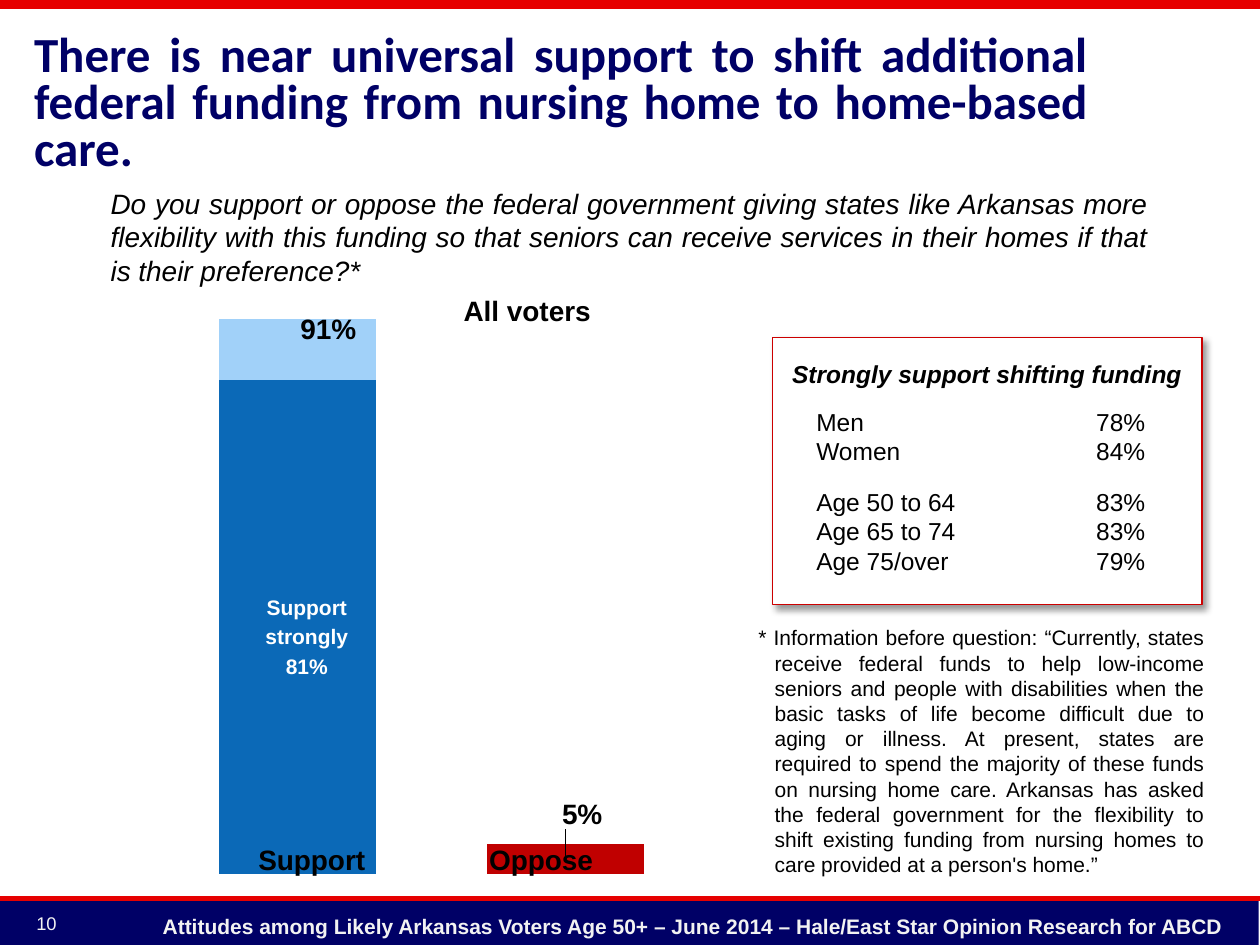
from lxml.etree import SubElement
from pptx import Presentation
from pptx.chart.data import CategoryChartData
from pptx.dml.color import RGBColor
from pptx.enum.chart import XL_CHART_TYPE
from pptx.enum.shapes import MSO_CONNECTOR, MSO_SHAPE
from pptx.enum.text import MSO_ANCHOR, MSO_AUTO_SIZE, PP_ALIGN
from pptx.oxml import parse_xml
from pptx.oxml.ns import nsdecls, qn
from pptx.util import Inches, Pt

COLORS = {
    "navy": "000066", "red": "E60000", "border": "CC0000", "pale": "F2F2F2",
    "black": "000000", "white": "FFFFFF", "strong": "0B69B7",
    "somewhat": "A1D1F9", "oppose": "C00000",
}


def color(name):
    return RGBColor.from_string(COLORS[name])


def set_font(font, size, tint="black", bold=False, italic=False, name="Arial"):
    font.name, font.size = name, Pt(size)
    font.bold, font.italic = bold, italic
    font.color.rgb = color(tint)


def add_text(page, box, paragraphs, size, tint="black", bold=False, italic=False,
             align=PP_ALIGN.LEFT, line=None, gap=None, wrap=True):
    frame = page.shapes.add_textbox(*map(Inches, box)).text_frame
    frame.word_wrap = wrap
    for index, text in enumerate(paragraphs):
        para = frame.add_paragraph() if index else frame.paragraphs[0]
        para.text = text
        para.alignment = align
        if line:
            para.line_spacing = Pt(line)
        if gap and index:
            para.space_before = Pt(gap)
        set_font(para.font, size, tint, bold, italic)
    return frame


def add_label(page, box, text, size=16, tint="black", italic=False):
    add_text(page, box, [text], size, tint, True, italic, PP_ALIGN.CENTER, line=17)


def add_rule(page, top, width):
    rule = page.shapes.add_connector(
        MSO_CONNECTOR.STRAIGHT, Inches(0), Inches(top), Inches(10), Inches(top))
    rule.line.color.rgb = color("red")
    rule.line.width = Pt(width)
    SubElement(rule._element.spPr, qn("a:effectLst"))


def add_panel(page, box, fill):
    panel = page.shapes.add_shape(MSO_SHAPE.RECTANGLE, *map(Inches, box))
    panel.shadow.inherit = False
    panel.fill.solid()
    panel.fill.fore_color.rgb = color(fill)
    panel.line.fill.background()
    return panel


def add_frame(page, left, top, width, height):
    add_rule(page, 0.03, 6)
    add_panel(page, (left, top, width, height), "navy")
    add_rule(page, top - 0.01, 3)
    add_text(page, (left + 1.09, top + 0.06, 8.72, 0.3),
             ["Attitudes among Likely Arkansas Voters Age 50+ – June 2014 – "
              "Hale/East Star Opinion Research for ABCD"],
             12, "pale", True, align=PP_ALIGN.RIGHT, wrap=False)
    add_text(page, (left + 0.19, top + 0.05, 0.64, 0.33), ["10"], 10.5, "pale")


def add_heading(page, left, top, width, height):
    title = page.shapes.title
    title.left, title.top = Inches(left), Inches(top)
    title.width, title.height = Inches(width), Inches(height)
    frame = title.text_frame
    frame.text = ("There is near universal support to shift additional federal "
                  "funding from nursing home to home-based care.")
    frame.auto_size = MSO_AUTO_SIZE.NONE
    frame.vertical_anchor = MSO_ANCHOR.MIDDLE
    para = frame.paragraphs[0]
    para.alignment = PP_ALIGN.JUSTIFY
    para.line_spacing = 0.8
    set_font(para.font, 28, "navy", True, name="Calibri")


def add_question(page, *box):
    add_text(page, box,
             ["Do you support or oppose the federal government giving states like "
              "Arkansas more flexibility with this funding so that seniors can "
              "receive services in their homes if that is their preference?*"],
             16, italic=True, align=PP_ALIGN.JUSTIFY)


def add_support_chart(page, left, top, width, height):
    data = CategoryChartData(number_format="0%")
    data.categories = ["1", "2"]
    data.add_series("Series 1", (0.81, None))
    data.add_series("Series 2", (0.1, None))
    data.add_series("Series 3", (None, 0.05))
    chart = page.shapes.add_chart(
        XL_CHART_TYPE.COLUMN_STACKED, *map(Inches, (left, top, width, height)), data).chart
    chart.has_legend = False
    chart.has_title = False
    set_font(chart.font, 18)
    chart.category_axis.visible = False
    values = chart.value_axis
    values.visible = False
    values.has_major_gridlines = False
    values.minimum_scale, values.maximum_scale = 0, 1
    plot = chart.plots[0]
    plot.gap_width, plot.overlap = 71, 100
    plot.vary_by_categories = False
    for series, fill in zip(plot.series, ("strong", "somewhat", "oppose")):
        series.format.fill.solid()
        series.format.fill.fore_color.rgb = color(fill)

    labels = plot.series[2].data_labels
    labels.show_value = True
    labels.number_format, labels.number_format_is_linked = "0%", False
    set_font(labels.font, 16, bold=True)
    point = plot.series[2].points[1].data_label
    set_font(point.font, 16, bold=True)
    point._dLbl.find(qn("c:idx")).addnext(parse_xml(
        f'<c:layout {nsdecls("c")}><c:manualLayout>'
        '<c:x val="0.03"/><c:y val="-0.07"/></c:manualLayout></c:layout>'))

    area = chart._chartSpace.chart.plotArea
    for layout in area.findall(qn("c:layout")):
        area.remove(layout)
    area.insert(0, parse_xml(
        f'<c:layout {nsdecls("c")}><c:manualLayout><c:layoutTarget val="inner"/>'
        '<c:xMode val="edge"/><c:yMode val="edge"/><c:x val="0.02"/><c:y val="0.02"/>'
        '<c:w val="0.96"/><c:h val="0.96"/></c:manualLayout></c:layout>'))

    for x, y, text in ((1.99, 0.31, "All voters"), (0.41, 0.45, "91%"),
                       (0.28, 4.67, "Support"), (2.1, 4.67, "Oppose")):
        add_label(page, (left + x, top + y, 1.97, 0.34), text)
    add_label(page, (left + 0.55, top + 2.63, 1.35, 0.82),
              "Support\vstrongly\v81%", 12, "white")


def add_breakdown(page, left, top, width, height):
    panel = add_panel(page, (left, top, width, height), "white")
    panel.line.color.rgb = color("border")
    panel.line.width = Pt(0.75)
    shadow = SubElement(panel._element.spPr.find(qn("a:effectLst")), qn("a:outerShdw"),
                        blurRad=str(Pt(4)), dist=str(Pt(3)), dir="2700000",
                        algn="tl", rotWithShape="0")
    tint = SubElement(shadow, qn("a:srgbClr"), val=COLORS["black"])
    SubElement(tint, qn("a:alpha"), val="40000")
    add_label(page, (left, top + 0.12, width, 0.34),
              "Strongly support shifting funding", 14, italic=True)
    add_text(page, (left + 0.25, top + 0.5, 2.59, 1.45),
             ["Men\vWomen", "Age 50 to 64\vAge 65 to 74\vAge 75/over"], 14, gap=12)
    add_text(page, (left + 2.31, top + 0.5, 0.91, 1.45),
             ["78%\v84%", "83%\v83%\v79%"], 14, align=PP_ALIGN.CENTER, gap=12)


def add_footnote(page, *box):
    frame = add_text(
        page, box,
        ["* Information before question: “Currently, states receive federal funds to "
         "help low-income seniors and people with disabilities when the basic tasks of "
         "life become difficult due to aging or illness. At present, states are required "
         "to spend the majority of these funds on nursing home care. Arkansas has asked "
         "the federal government for the flexibility to shift existing funding from "
         "nursing homes to care provided at a person's home.”"],
        12, align=PP_ALIGN.JUSTIFY)
    properties = frame.paragraphs[0]._p.get_or_add_pPr()
    properties.set("marL", str(Inches(0.13)))
    properties.set("indent", str(Inches(-0.13)))


def main():
    deck = Presentation()
    deck.slide_width, deck.slide_height = Inches(10), Inches(7.5)
    page = deck.slides.add_slide(deck.slide_layouts[5])
    add_frame(page, 0, 7.14, 9.99, 0.36)
    add_heading(page, 0.17, 0.21, 8.56, 1.25)
    add_support_chart(page, 1.21, 2, 4.43, 5.04)
    add_question(page, 0.78, 1.43, 8.43, 0.91)
    add_breakdown(page, 6.13, 2.68, 3.41, 2.12)
    add_footnote(page, 5.92, 4.91, 3.74, 2.12)
    deck.save("out.pptx")


if __name__ == "__main__":
    main()
